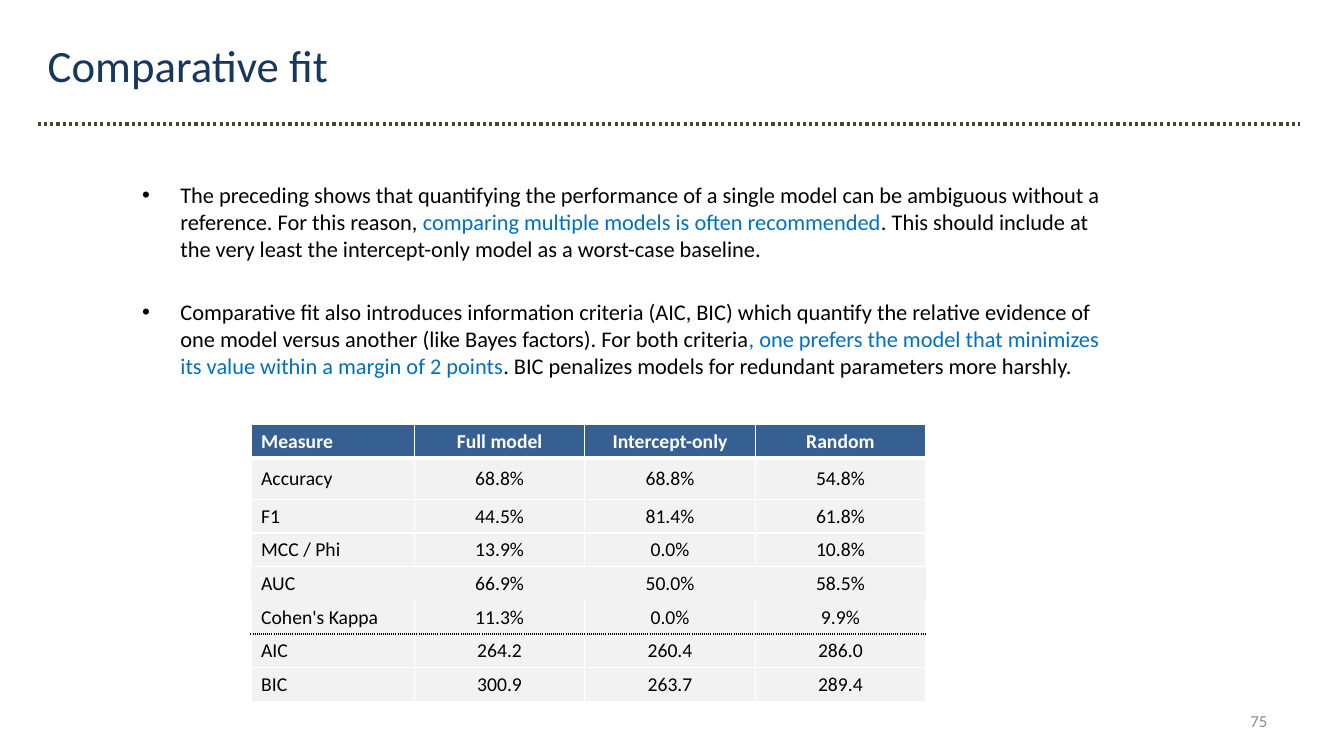
import pptx
import pptx.dml.color
import pptx.enum.dml
import pptx.enum.shapes
import pptx.enum.text
import pptx.oxml
import pptx.oxml.ns
import pptx.util

RGBColor = pptx.dml.color.RGBColor
Pt = pptx.util.Pt
Align = pptx.enum.text.PP_ALIGN
Anchor = pptx.enum.text.MSO_ANCHOR

NAVY = RGBColor(0x17, 0x37, 0x5E)
OLIVE = RGBColor(0x4A, 0x45, 0x2A)
BLUE = RGBColor(0x00, 0x70, 0xC0)
HEADER_BLUE = RGBColor(0x37, 0x60, 0x92)
PALE_GREY = RGBColor(0xF2, 0xF2, 0xF2)
GREY = RGBColor(0x8C, 0x8C, 0x8C)
BLACK = RGBColor(0, 0, 0)
WHITE = RGBColor(0xFF, 0xFF, 0xFF)

FONT = "Calibri"
SLIDE_WIDTH = pptx.util.Inches(13.33)
SLIDE_HEIGHT = pptx.util.Inches(7.5)
PLAIN_TABLE_STYLE = "{2D5ABB26-0587-4C30-8999-92F81FD0307C}"

# Each bullet is a list of (text, colour) runs.
BULLETS = [
    [("The preceding shows that quantifying the performance of a single model can be "
      "ambiguous without a reference. For this reason, ", BLACK),
     ("comparing multiple models is often recommended", BLUE),
     (". This should include at the very least the intercept-only model as a "
      "worst-case baseline.", BLACK)],
    [("Comparative fit also introduces information criteria (AIC, BIC) which quantify "
      "the relative evidence of one model versus another (like Bayes factors). "
      "For both criteria", BLACK),
     (", one prefers the model that minimizes its value within a margin of 2 points", BLUE),
     (". BIC penalizes models for redundant parameters more harshly.", BLACK)],
]

MEASURES = [
    ("Measure", "Full model", "Intercept-only", "Random"),
    ("Accuracy", "68.8%", "68.8%", "54.8%"),
    ("F1", "44.5%", "81.4%", "61.8%"),
    ("MCC / Phi", "13.9%", "0.0%", "10.8%"),
    ("AUC", "66.9%", "50.0%", "58.5%"),
    ("Cohen's Kappa", "11.3%", "0.0%", "9.9%"),
    ("AIC", "264.2", "260.4", "286.0"),
    ("BIC", "300.9", "263.7", "289.4"),
]
COLUMN_WEIGHTS = [1.62, 1.69, 1.69, 1.69]
ROW_WEIGHTS = [0.33, 0.41] + [0.33] * 6

# Border below each row: (colour, points, dash), or None.
THIN = (WHITE, 1, "solid")
THICK = (WHITE, 3, "solid")
DOTTED = (BLACK, 1, "sysDot")
RULES_BELOW = [THICK, THIN, THIN, None, None, DOTTED, THIN, THIN]
OPEN_ROW = 4


def percent_box(left, top, width, height):
    """Turn percentages of the slide's size into lengths."""
    return (int(SLIDE_WIDTH * left / 100), int(SLIDE_HEIGHT * top / 100),
            int(SLIDE_WIDTH * width / 100), int(SLIDE_HEIGHT * height / 100))


def place(shape, box):
    shape.left, shape.top, shape.width, shape.height = box


def style_font(font, size, color, bold=False):
    font.name, font.size, font.bold = FONT, Pt(size), bold
    font.color.rgb = color


def add_title(slide, box):
    title = slide.shapes.title
    place(title, box)
    frame = title.text_frame
    frame.text = "Comparative fit"
    frame.vertical_anchor = Anchor.TOP
    paragraph = frame.paragraphs[0]
    paragraph.alignment = Align.LEFT
    style_font(paragraph.runs[0].font, 32, NAVY)


def add_divider(slide, box):
    left, top, width, height = box
    line = slide.shapes.add_connector(
        pptx.enum.shapes.MSO_CONNECTOR.STRAIGHT, left, top, left + width, top + height)
    line.line.color.rgb = OLIVE
    line.line.width = Pt(2.25)
    line.line.dash_style = pptx.enum.dml.MSO_LINE.ROUND_DOT
    properties = line._element.spPr
    properties.append(properties.makeelement(pptx.oxml.ns.qn("a:effectLst"), {}))


def add_bullets(slide, box):
    body = slide.placeholders[1]
    place(body, box)
    frame = body.text_frame
    frame.auto_size = pptx.enum.text.MSO_AUTO_SIZE.NONE
    for index, pieces in enumerate(BULLETS):
        paragraph = frame.add_paragraph() if index else frame.paragraphs[0]
        properties = paragraph._p.get_or_add_pPr()
        indent = pptx.util.Inches(0.38)
        properties.set("marL", str(indent))
        properties.set("indent", str(-indent))
        bullet = properties.makeelement(pptx.oxml.ns.qn("a:buChar"), {"char": "•"})
        properties.append(bullet)
        paragraph.space_before = Pt(26 if index else 0)
        for text, color in pieces:
            run = paragraph.add_run()
            run.text = text
            style_font(run.font, 16, color)


def add_border(cell, side, rule):
    color, points, dash = rule
    cell._tc.get_or_add_tcPr().append(pptx.oxml.parse_xml(
        f'<a:{side} {pptx.oxml.ns.nsdecls("a")} w="{Pt(points)}">'
        f'<a:solidFill><a:srgbClr val="{color}"/></a:solidFill>'
        f'<a:prstDash val="{dash}"/></a:{side}>'))


def format_cell(cell, row, column):
    above = RULES_BELOW[row - 1] if row else THIN
    upright = None if row == OPEN_ROW else THIN
    sides = {"lnL": upright, "lnR": upright, "lnT": above, "lnB": RULES_BELOW[row]}
    for side, rule in sides.items():
        if rule:
            add_border(cell, side, rule)
    is_header = row == 0
    cell.fill.solid()
    cell.fill.fore_color.rgb = HEADER_BLUE if is_header else PALE_GREY
    cell.vertical_anchor = Anchor.MIDDLE
    paragraph = cell.text_frame.paragraphs[0]
    paragraph.alignment = Align.CENTER if column else Align.LEFT
    style_font(paragraph.runs[0].font, 14, WHITE if is_header else BLACK, is_header)


def add_measure_table(slide, box):
    width, height = box[2:]
    table = slide.shapes.add_table(len(MEASURES), len(MEASURES[0]), *box).table
    table.horz_banding = False
    table._tbl.tblPr.find(pptx.oxml.ns.qn("a:tableStyleId")).text = PLAIN_TABLE_STYLE
    for column, weight in zip(table.columns, COLUMN_WEIGHTS):
        column.width = int(width * weight / sum(COLUMN_WEIGHTS))
    for row, weight in zip(table.rows, ROW_WEIGHTS):
        row.height = int(height * weight / sum(ROW_WEIGHTS))
    for row, texts in enumerate(MEASURES):
        for column, text in enumerate(texts):
            cell = table.cell(row, column)
            cell.text_frame.text = text
            format_cell(cell, row, column)


def add_page_number(slide, box):
    frame = slide.shapes.add_textbox(*box).text_frame
    frame.word_wrap = True
    frame.vertical_anchor = Anchor.MIDDLE
    frame.text = "75"
    paragraph = frame.paragraphs[0]
    paragraph.alignment = Align.RIGHT
    style_font(paragraph.runs[0].font, 12, GREY)


def main():
    presentation = pptx.Presentation()
    presentation.slide_width = SLIDE_WIDTH
    presentation.slide_height = SLIDE_HEIGHT
    slide = presentation.slides.add_slide(presentation.slide_layouts[1])
    add_page_number(slide, percent_box(71.7, 92.67, 23.33, 5.33))
    add_divider(slide, percent_box(2.8, 16.4, 93.9, 0))
    add_title(slide, percent_box(2.8, 4.27, 87.4, 8.53))
    add_bullets(slide, percent_box(9.82, 23.33, 73.2, 71.87))
    add_measure_table(slide, percent_box(18.68, 56.13, 50.2, 36.3))
    presentation.save("out.pptx")


if __name__ == "__main__":
    main()
